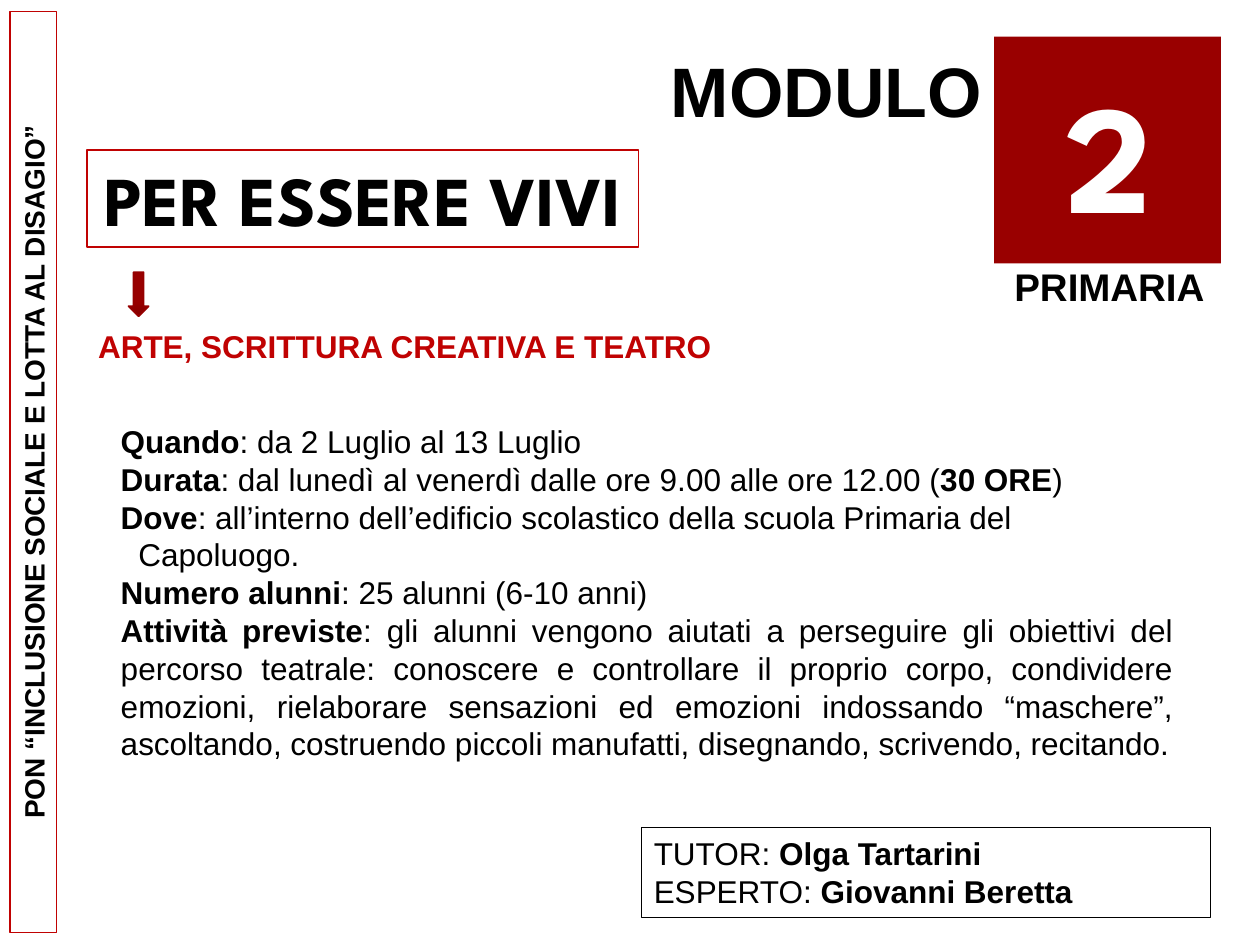
from dataclasses import dataclass

from pptx import Presentation
from pptx.dml.color import RGBColor
from pptx.enum.shapes import MSO_SHAPE as Shape
from pptx.enum.text import MSO_ANCHOR as Anchor, MSO_AUTO_SIZE as AutoSize, PP_ALIGN as Align
from pptx.util import Inches, Pt


@dataclass(frozen=True)
class Theme:
    black: str = "000000"
    white: str = "FFFFFF"
    red: str = "C00202"
    dark_red: str = "990000"
    arrow_shade: str = "830000"
    arrow_edge: str = "960000"
    body_font: str = "Arial"
    display_font: str = "League Spartan"
    number: int = 88
    heading: int = 40
    level: int = 22
    body: int = 18
    banner: int = 16


THEME = Theme()


def rgb(value):
    return RGBColor.from_string(value)


def place(item, left, top, width, height):
    item.left, item.top = Inches(left), Inches(top)
    item.width, item.height = Inches(width), Inches(height)


def outline(item, color, weight):
    item.line.color.rgb = rgb(color)
    item.line.width = Pt(weight)


def write(item, paragraphs, size, color=THEME.black, font=THEME.body_font,
          align=Align.LEFT, anchor=Anchor.TOP):
    """Fill a shape with paragraphs, each a list of (text, bold) runs."""
    frame = item.text_frame
    frame.word_wrap = True
    frame.auto_size = AutoSize.NONE
    frame.vertical_anchor = anchor
    for index, runs in enumerate(paragraphs):
        paragraph = frame.add_paragraph() if index else frame.paragraphs[0]
        paragraph.alignment = align
        for text, bold in runs:
            run = paragraph.add_run()
            run.text = text
            run.font.name = font
            run.font.size = Pt(size)
            run.font.bold = bold
            run.font.color.rgb = rgb(color)


def add_label(slide, box, paragraphs, size, **style):
    label = slide.shapes.add_textbox(*map(Inches, box))
    write(label, paragraphs, size, **style)
    return label


def add_panel(slide, box, kind=Shape.RECTANGLE, fill=None, line=None, weight=1):
    panel = slide.shapes.add_shape(kind, *map(Inches, box))
    panel.shadow.inherit = False
    if fill:
        panel.fill.solid()
        panel.fill.fore_color.rgb = rgb(fill)
    else:
        panel.fill.background()
    if line:
        outline(panel, line, weight)
    else:
        panel.line.fill.background()
    return panel


def add_arrow(slide, box):
    arrow = add_panel(slide, box, Shape.DOWN_ARROW, line=THEME.arrow_edge)
    arrow.fill.gradient()
    arrow.fill.gradient_angle = 90
    shades = ((0, THEME.arrow_shade), (0.35, THEME.dark_red))
    for stop, (position, color) in zip(arrow.fill.gradient_stops, shades):
        stop.position = position
        stop.color.rgb = rgb(color)


def add_title(slide, box, text):
    title = slide.shapes.title
    place(title, *box)
    outline(title, THEME.red, 0.75)
    write(title, [[(text, True)]], THEME.heading, font=THEME.display_font,
          align=Align.CENTER, anchor=Anchor.MIDDLE)


def add_details(slide, box):
    details = add_label(slide, box, [
        [("Quando", True), (": da 2 Luglio al 13 Luglio", False)],
        [("Durata", True), (": dal lunedì al venerdì dalle ore 9.00 alle ore 12.00 (", False),
         ("30 ORE", True), (")", False)],
        [("Dove", True), (": all’interno dell’edificio scolastico della scuola Primaria "
                          "del Capoluogo.", False)],
        [("Numero alunni", True), (": 25 alunni (6-10 anni)", False)],
        [("Attività previste", True),
         (": gli alunni vengono aiutati a perseguire gli obiettivi del percorso teatrale: "
          "conoscere e controllare il proprio corpo, condividere emozioni, rielaborare "
          "sensazioni ed emozioni indossando “maschere”, ascoltando, costruendo piccoli "
          "manufatti, disegnando, scrivendo, recitando.", False)],
    ], THEME.body, align=Align.JUSTIFY)
    # The place runs over two lines with a hanging indent
    place_line = details.text_frame.paragraphs[2]
    place_line.alignment = Align.LEFT
    properties = place_line._p.get_or_add_pPr()
    properties.set("marL", str(Inches(0.14)))
    properties.set("indent", str(-Inches(0.14)))


def main():
    deck = Presentation()
    deck.slide_width, deck.slide_height = Inches(10), Inches(7.5)
    slide = deck.slides.add_slide(deck.slide_layouts[5])

    # Module number and school level
    add_panel(slide, (7.89, 0.29, 1.8, 1.8), fill=THEME.dark_red)
    add_label(slide, (5.09, 0.33, 2.8, 0.77), [[("MODULO", True)]],
              THEME.heading, align=Align.RIGHT)
    add_label(slide, (8.02, 0.42, 1.57, 1.58), [[("2", True)]], THEME.number,
              color=THEME.white, font=THEME.display_font, align=Align.CENTER)
    add_label(slide, (7.89, 2.04, 1.83, 0.47), [[("PRIMARIA", True)]],
              THEME.level, align=Align.CENTER)

    # Programme banner along the left edge
    banner = add_panel(slide, (-3.39, 3.56, 7.31, 0.37), line=THEME.red)
    banner.rotation = 270
    write(banner, [[("PON “INCLUSIONE SOCIALE E LOTTA AL DISAGIO”", True)]],
          THEME.banner, align=Align.CENTER, anchor=Anchor.MIDDLE)

    # Title leading down to the subject
    add_title(slide, (0.69, 1.19, 4.38, 0.77), "PER ESSERE VIVI")
    add_arrow(slide, (1.02, 2.16, 0.16, 0.35))
    add_label(slide, (0.68, 2.55, 6.98, 0.4),
              [[("ARTE, SCRITTURA CREATIVA E TEATRO", True)]], THEME.body, color=THEME.red)

    # Course details and staff
    add_details(slide, (0.86, 3.3, 8.55, 2.83))
    staff = add_panel(slide, (5.09, 6.57, 4.52, 0.71), line=THEME.black, weight=0.75)
    write(staff, [[("TUTOR: ", False), ("Olga Tartarini", True)],
                  [("ESPERTO: ", False), ("Giovanni Beretta", True)]], THEME.body)

    deck.save("out.pptx")


if __name__ == "__main__":
    main()
